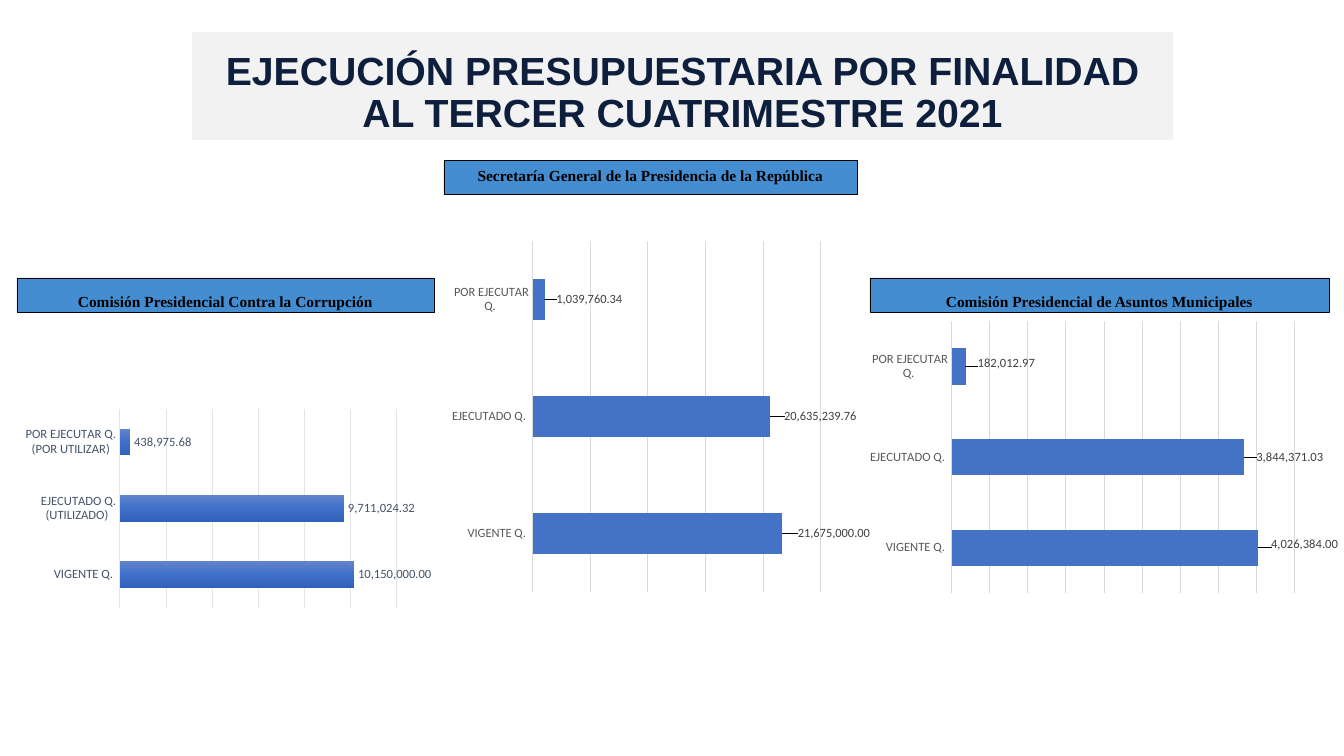
from copy import deepcopy

from lxml import etree
from pptx import Presentation
from pptx.chart.data import CategoryChartData
from pptx.dml.color import RGBColor
from pptx.enum.chart import XL_CHART_TYPE, XL_LABEL_POSITION, XL_TICK_MARK
from pptx.enum.shapes import MSO_SHAPE
from pptx.enum.text import MSO_ANCHOR, MSO_AUTO_SIZE, PP_ALIGN
from pptx.oxml.ns import qn
from pptx.util import Pt

BAR_CLUSTERED = XL_CHART_TYPE.BAR_CLUSTERED
OUTSIDE_END = XL_LABEL_POSITION.OUTSIDE_END
NO_TICK = XL_TICK_MARK.NONE
RECTANGLE = MSO_SHAPE.RECTANGLE
TOP, MIDDLE = MSO_ANCHOR.TOP, MSO_ANCHOR.MIDDLE
NO_AUTOFIT = MSO_AUTO_SIZE.NONE
CENTER = PP_ALIGN.CENTER

NAVY = RGBColor(0x0D, 0x1F, 0x3C)
BAND = RGBColor(0xF2, 0xF2, 0xF2)
HEADER_BLUE = RGBColor(0x44, 0x8D, 0xD0)
BLACK = RGBColor(0, 0, 0)
BAR_BLUE = RGBColor(0x44, 0x72, 0xC4)
GRAY_GRID = RGBColor(0xD9, 0xD9, 0xD9)
GRAY_TEXT = RGBColor(0x59, 0x59, 0x59)
VALUE_TEXT = RGBColor(0x40, 0x40, 0x40)
SLATE_GRID = RGBColor(0xE0, 0xE5, 0xEB)
SLATE = RGBColor(0x44, 0x54, 0x6A)
BAR_GRADIENT = [(0, RGBColor(0x61, 0x83, 0xCB)),
                (0.5, RGBColor(0x3E, 0x70, 0xCA)),
                (1, RGBColor(0x30, 0x62, 0xBB))]

TITLE = "EJECUCIÓN PRESUPUESTARIA POR FINALIDAD AL TERCER CUATRIMESTRE 2021"
TITLE_BAND = (192, 32, 981, 108)
TITLE_BOX = (198, 64, 969, 60)
NUMBER_FORMAT = "#,##0.00"
STAGES = ["VIGENTE Q. ", "EJECUTADO Q. ", "POR EJECUTAR Q. "]

ENTITIES = [
    dict(name="Secretaría General de la Presidencia de la República",
         header=(444, 160, 413, 34), spacing=1.07,
         frame=(448, 231, 422, 371), plot=(534, 241, 293, 351),
         stages=STAGES, amounts=[21675000, 20635239.76, 1039760.34],
         maximum=25000000, step=5000000, gap=182, gradient=False,
         grid=GRAY_GRID, axis_line=True, stage_color=GRAY_TEXT,
         value_color=VALUE_TEXT, shifts=[(12, 0), (10, 0), (8, 0)]),
    dict(name="Comisión Presidencial Contra la Corrupción",
         header=(17, 278, 417, 34), spacing=1.5,
         frame=(17, 324, 417, 299), plot=(120, 409, 277, 199),
         stages=["VIGENTE Q. ", "EJECUTADO Q. (UTILIZADO) ",
                 "POR EJECUTAR Q. (POR UTILIZAR)"],
         amounts=[10150000, 9711024.32, 438975.68],
         maximum=12000000, step=2000000, gap=150, gradient=True,
         grid=SLATE_GRID, axis_line=True, stage_color=SLATE,
         value_color=SLATE, shifts=[]),
    dict(name="Comisión Presidencial de Asuntos Municipales",
         header=(870, 278, 459, 34), spacing=1.5,
         frame=(870, 306, 474, 302), plot=(951, 321, 343, 272),
         stages=STAGES, amounts=[4026384, 3844371.03, 182012.97],
         maximum=4500000, step=500000, gap=150, gradient=False,
         grid=GRAY_GRID, axis_line=False, stage_color=GRAY_TEXT,
         value_color=VALUE_TEXT, shifts=[(9, -3), (8, 0), (8, -3)]),
]


def px(length):
    return round(length * 914400 / 100.8)


def emu(box):
    return [px(length) for length in box]


def style_font(font, name, size, color, bold=False):
    font.name, font.size, font.bold = name, Pt(size), bold
    font.color.rgb = color


def add_box(slide, box, color):
    shape = slide.shapes.add_shape(RECTANGLE, *emu(box))
    shape.shadow.inherit = False
    shape.fill.solid()
    shape.fill.fore_color.rgb = color
    shape.line.fill.background()
    return shape


def add_header(slide, entity):
    header = add_box(slide, entity["header"], HEADER_BLUE)
    header.line.color.rgb = BLACK
    header.line.width = Pt(0.5)
    frame = header.text_frame
    frame.text = entity["name"]
    frame.word_wrap = True
    frame.vertical_anchor = TOP
    paragraph = frame.paragraphs[0]
    paragraph.alignment = CENTER
    paragraph.line_spacing = entity["spacing"]
    paragraph.space_after = Pt(8)
    style_font(paragraph.runs[0].font, "Times New Roman", 11, BLACK, True)


def make_layout(**settings):
    layout = etree.Element(qn("c:layout"))
    manual = etree.SubElement(layout, qn("c:manualLayout"))
    for tag, value in settings.items():
        etree.SubElement(manual, qn("c:" + tag)).set("val", str(value))
    return layout


def place_plot(chart, frame, plot):
    left, top, width, height = frame
    x, y, w, h = plot
    area = chart.plots[0]._element.getparent()
    for previous in area.findall(qn("c:layout")):
        area.remove(previous)
    area.insert(0, make_layout(
        layoutTarget="inner", xMode="edge", yMode="edge",
        x=round((x - left) / width, 3), y=round((y - top) / height, 3),
        w=round(w / width, 3), h=round(h / height, 3)))


def fill_bars(series, gradient):
    fill = series.format.fill
    if not gradient:
        fill.solid()
        fill.fore_color.rgb = BAR_BLUE
        return
    fill.gradient()
    fill.gradient_angle = 270
    stop_list = next(series._element.iter(qn("a:gsLst")))
    stop_list.append(deepcopy(stop_list[-1]))
    for stop, (position, color) in zip(fill.gradient_stops, BAR_GRADIENT):
        stop.position = position
        stop.color.rgb = color


def label_bars(series, entity):
    labels = series.data_labels
    labels.show_value = True
    labels.number_format = NUMBER_FORMAT
    labels.number_format_is_linked = False
    labels.position = OUTSIDE_END
    style_font(labels.font, "Calibri", 9, entity["value_color"])
    width, height = entity["frame"][2:]
    for index, (dx, dy) in enumerate(entity["shifts"]):
        label = series.points[index].data_label
        style_font(label.font, "Calibri", 9, entity["value_color"])
        label.position = OUTSIDE_END
        node = series._element.findall(".//" + qn("c:dLbl"))[index]
        number = etree.Element(qn("c:numFmt"), formatCode=NUMBER_FORMAT,
                               sourceLinked="0")
        node.insert(1, make_layout(x=round(dx / width, 3),
                                   y=round(dy / height, 3)))
        node.insert(2, number)


def add_budget_chart(slide, entity):
    data = CategoryChartData(number_format=NUMBER_FORMAT)
    data.categories = entity["stages"]
    data.add_series("Series 1", entity["amounts"])
    chart = slide.shapes.add_chart(
        BAR_CLUSTERED, *emu(entity["frame"]), data).chart
    chart.has_title = chart.has_legend = False
    style_font(chart.font, "Calibri", 10, BLACK)
    bars = chart.plots[0]
    bars.gap_width = entity["gap"]
    bars.vary_by_categories = False
    fill_bars(bars.series[0], entity["gradient"])
    label_bars(bars.series[0], entity)

    stages = chart.category_axis
    stages.major_tick_mark = stages.minor_tick_mark = NO_TICK
    stages.has_major_gridlines = False
    style_font(stages.tick_labels.font, "Calibri", 9, entity["stage_color"])
    amounts = chart.value_axis
    amounts.minimum_scale, amounts.maximum_scale = 0, entity["maximum"]
    amounts.major_unit = entity["step"]
    amounts.visible = False
    amounts.has_major_gridlines = True
    lines = [amounts.major_gridlines.format.line]
    if entity["axis_line"]:
        lines.append(stages.format.line)
    else:
        stages.format.line.fill.background()
    for line in lines:
        line.color.rgb = entity["grid"]
        line.width = Pt(0.75)
    place_plot(chart, entity["frame"], entity["plot"])


def add_title(slide):
    title = slide.shapes.title
    title.left, title.top, title.width, title.height = emu(TITLE_BOX)
    frame = title.text_frame
    frame.text = TITLE
    frame.word_wrap = True
    frame.auto_size = NO_AUTOFIT
    frame.vertical_anchor = MIDDLE
    paragraph = frame.paragraphs[0]
    paragraph.alignment = CENTER
    paragraph.line_spacing = 0.9
    style_font(paragraph.runs[0].font, "Arial", 28, NAVY, True)


def main():
    deck = Presentation()
    deck.slide_width, deck.slide_height = px(1344), px(756)
    slide = deck.slides.add_slide(deck.slide_layouts[5])
    band = add_box(slide, TITLE_BAND, BAND)
    slide.shapes.title._element.addprevious(band._element)
    add_title(slide)
    for entity in ENTITIES:
        add_header(slide, entity)
        add_budget_chart(slide, entity)
    deck.save("out.pptx")


if __name__ == "__main__":
    main()
